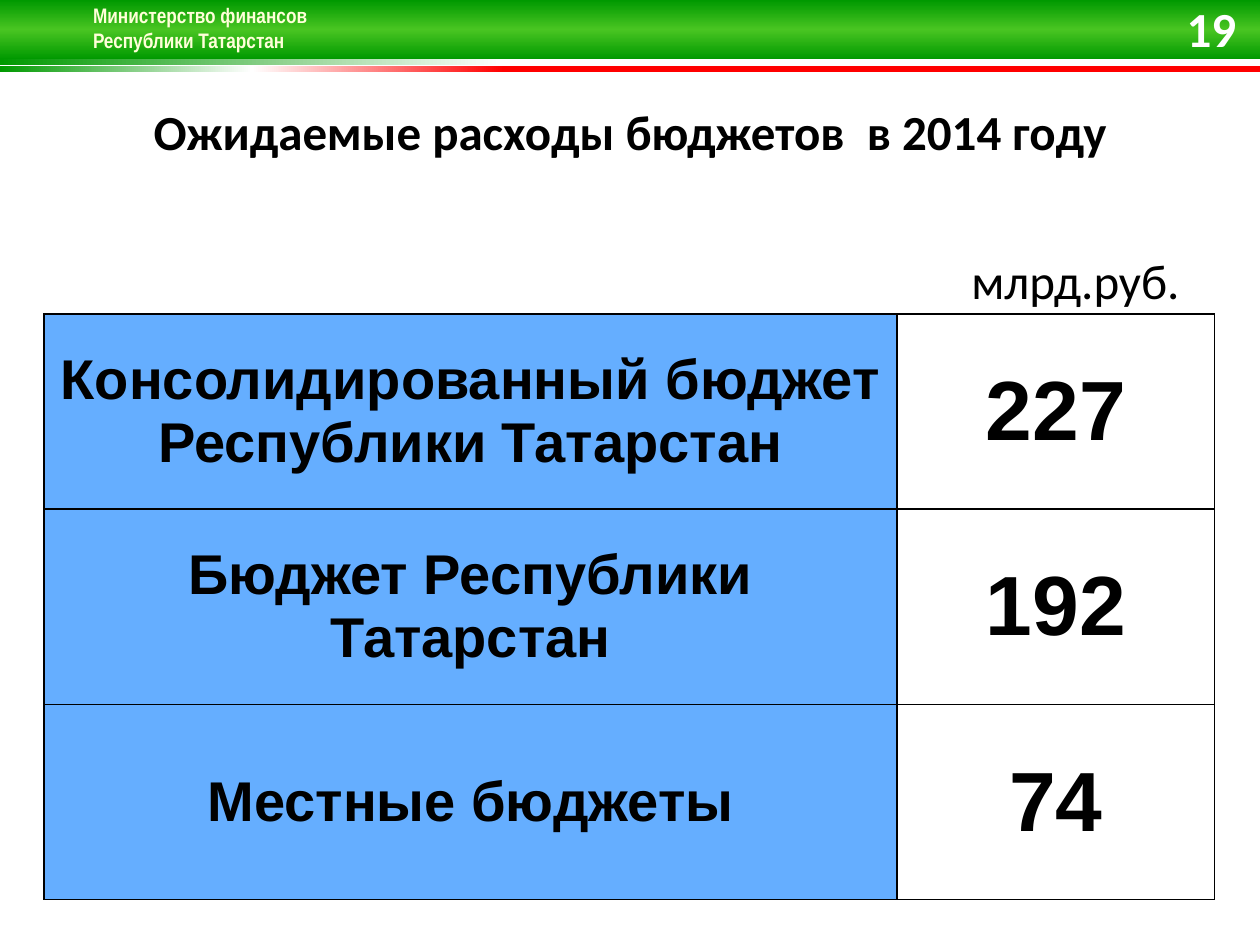
from lxml import etree
from pptx import Presentation
from pptx.dml.color import RGBColor
from pptx.enum.shapes import MSO_SHAPE
from pptx.enum.text import MSO_ANCHOR, PP_ALIGN
from pptx.oxml.ns import qn
from pptx.util import Inches, Pt

RECT = MSO_SHAPE.RECTANGLE
TOP, MIDDLE = MSO_ANCHOR.TOP, MSO_ANCHOR.MIDDLE
LEFT, CENTER, RIGHT = PP_ALIGN.LEFT, PP_ALIGN.CENTER, PP_ALIGN.RIGHT

THEME = {
    "green": "009900", "light_green": "49C522", "red": "FF0000",
    "white": "FFFFFF", "black": "000000", "cream": "FFFFD9", "blue": "65AEFF",
    "header": 12, "title": 28, "label": 32, "value": 48,
}


def add_element(parent, tag, **attrs):
    return etree.SubElement(parent, qn(tag), attrs)


def write(tf, text, align, size, font, color, bold):
    p = tf.paragraphs[0]
    p.text = text
    p.alignment = align
    for r in p.runs:
        style = {"size": Pt(THEME[size]), "name": font, "bold": bold}
        for name, value in style.items():
            setattr(r.font, name, value)
        r.font.color.rgb = RGBColor.from_string(THEME[color])


prs = Presentation()
prs.slide_width, prs.slide_height = Inches(10), Inches(7.5)
s = prs.slides.add_slide(prs.slide_layouts[6])

# Header bands: top, height, clockwise angle, gradient stops
bands = [
    (0.47, 0.05, 180, [(0, "white"), (60, "white"), (100, "green")]),
    (0.52, 0.05, 180, [(60, "red"), (80, "white"), (100, "green")]),
    (0, 0.47, 90, [(0, "green"), (50, "light_green"), (100, "green")]),
]
for top, height, angle, stops in bands:
    sp = s.shapes.add_shape(RECT, 0, Inches(top), prs.slide_width, Inches(height))
    sp.shadow.inherit = False
    sp.line.fill.background()
    sp.fill.gradient()
    grad = sp._element.spPr.find(qn("a:gradFill"))
    for child in list(grad):
        grad.remove(child)
    stop_list = add_element(grad, "a:gsLst")
    for position, color in stops:
        stop = add_element(stop_list, "a:gs", pos=str(position * 1000))
        add_element(stop, "a:srgbClr", val=THEME[color])
    add_element(grad, "a:lin", ang=str(angle * 60000), scaled="0")

# Text boxes: place, wrap, anchor, text and its style
boxes = [
    ((0.64, -0.03, 1.92, 0.71), False, TOP, "Министерство финансов\vРеспублики Татарстан",
     LEFT, "header", "Arial Narrow", "cream", True),
    ((0, 0.76, 10, 0.68), True, TOP, "Ожидаемые расходы бюджетов  в 2014 году",
     CENTER, "title", "Calibri", "black", True),
    ((7.59, 1.94, 1.87, 0.57), False, TOP, "млрд.руб.",
     RIGHT, "title", "Calibri", "black", False),
    ((9.27, 0.05, 0.64, 0.34), True, MIDDLE, "19",
     RIGHT, "title", "Calibri", "white", True),
]
frames = []
for place, wrap, anchor, *content in boxes:
    tf = s.shapes.add_textbox(*map(Inches, place)).text_frame
    tf.word_wrap = wrap
    tf.vertical_anchor = anchor
    write(tf, *content)
    frames.append(tf)

# Soft shadow behind the ministry name
for r in frames[0].paragraphs[0].runs:
    effects = etree.Element(qn("a:effectLst"))
    shadow = add_element(effects, "a:outerShdw", blurRad="38100", dist="38100", dir="2700000")
    color = add_element(shadow, "a:srgbClr", val=THEME["black"])
    add_element(color, "a:alpha", val="60000")
    r.font._element.find(qn("a:solidFill")).addnext(effects)

# Budget table
budgets = [
    ("Консолидированный бюджет Республики Татарстан", "227"),
    ("Бюджет Республики Татарстан", "192"),
    ("Местные бюджеты", "74"),
]
columns = [(6.77, "label", "blue"), (2.52, "value", "white")]
table = s.shapes.add_table(len(budgets), len(columns), Inches(0.35), Inches(2.49),
                           Inches(9.29), Inches(4.65)).table
table.first_row = table.horz_banding = False
for row in table.rows:
    row.height = Inches(1.55)
for col, (width, size, fill) in enumerate(columns):
    table.columns[col].width = Inches(width)
    for row, budget in enumerate(budgets):
        cell = table.cell(row, col)
        cell.vertical_anchor = MIDDLE
        write(cell.text_frame, budget[col], CENTER, size, "Arial", "black", True)
        tc_pr = cell._tc.get_or_add_tcPr()
        for side in ("a:lnL", "a:lnR", "a:lnT", "a:lnB"):
            border = add_element(tc_pr, side, w=str(Pt(1)))
            add_element(add_element(border, "a:solidFill"), "a:srgbClr", val=THEME["black"])
        cell.fill.solid()
        cell.fill.fore_color.rgb = RGBColor.from_string(THEME[fill])

prs.save("out.pptx")
